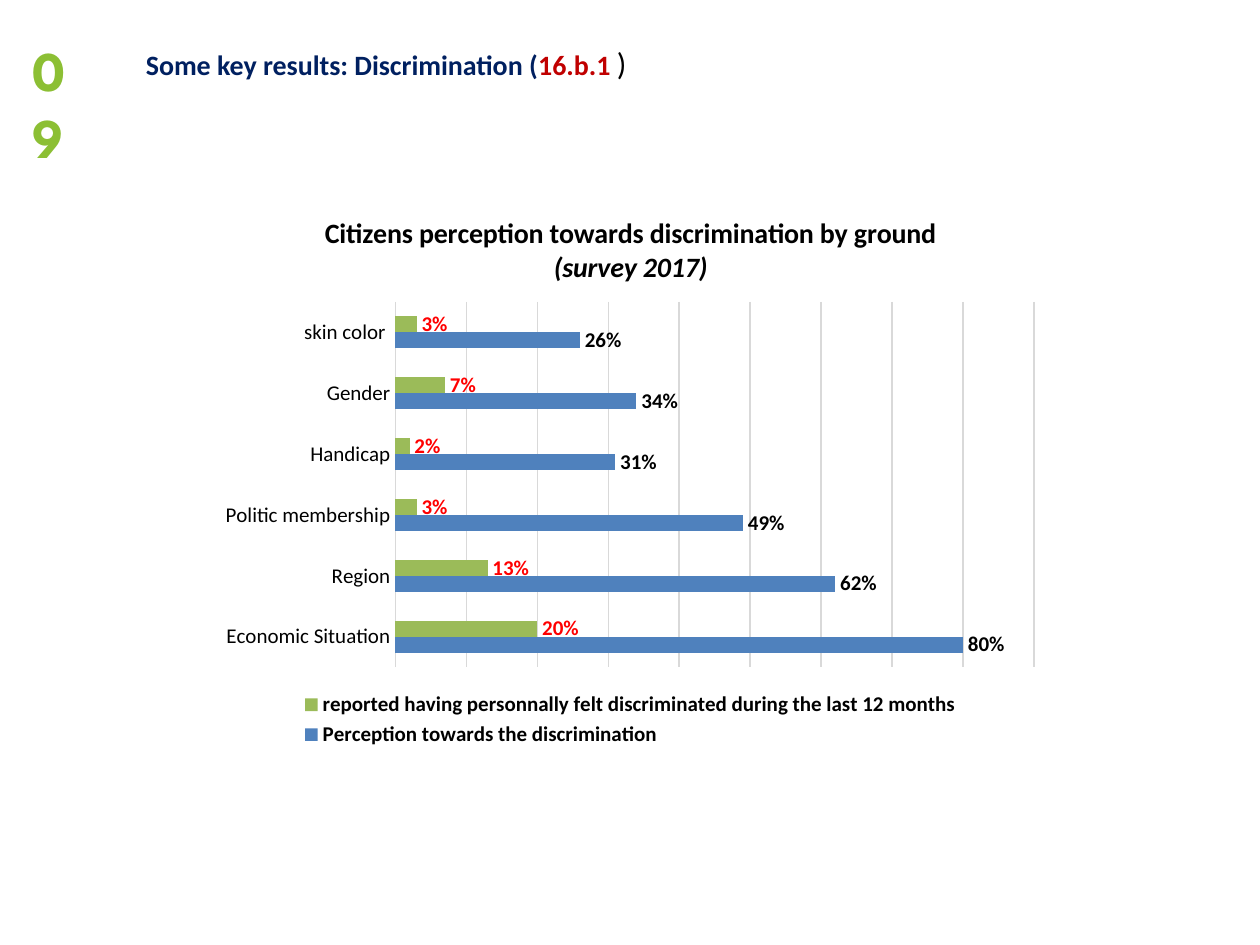
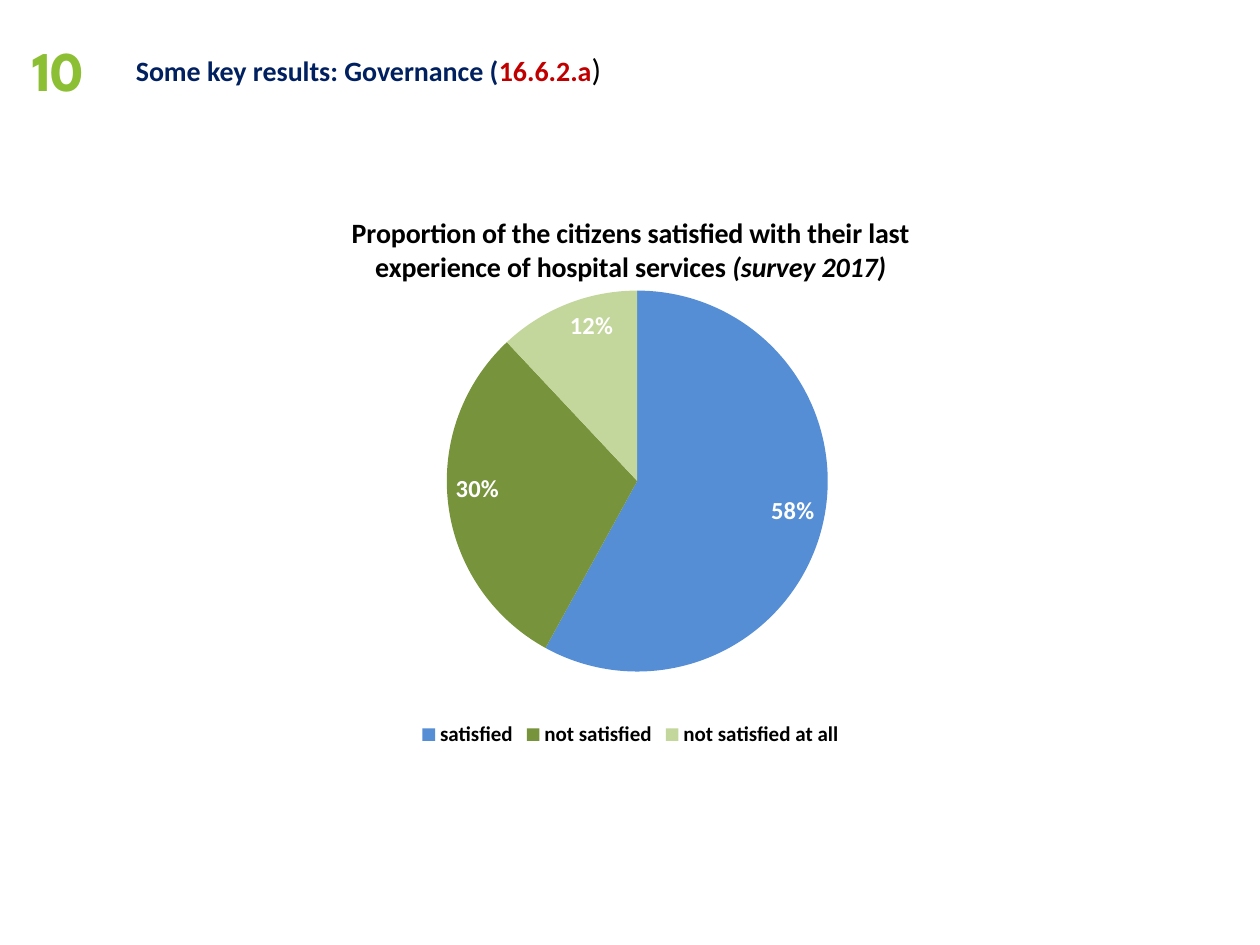
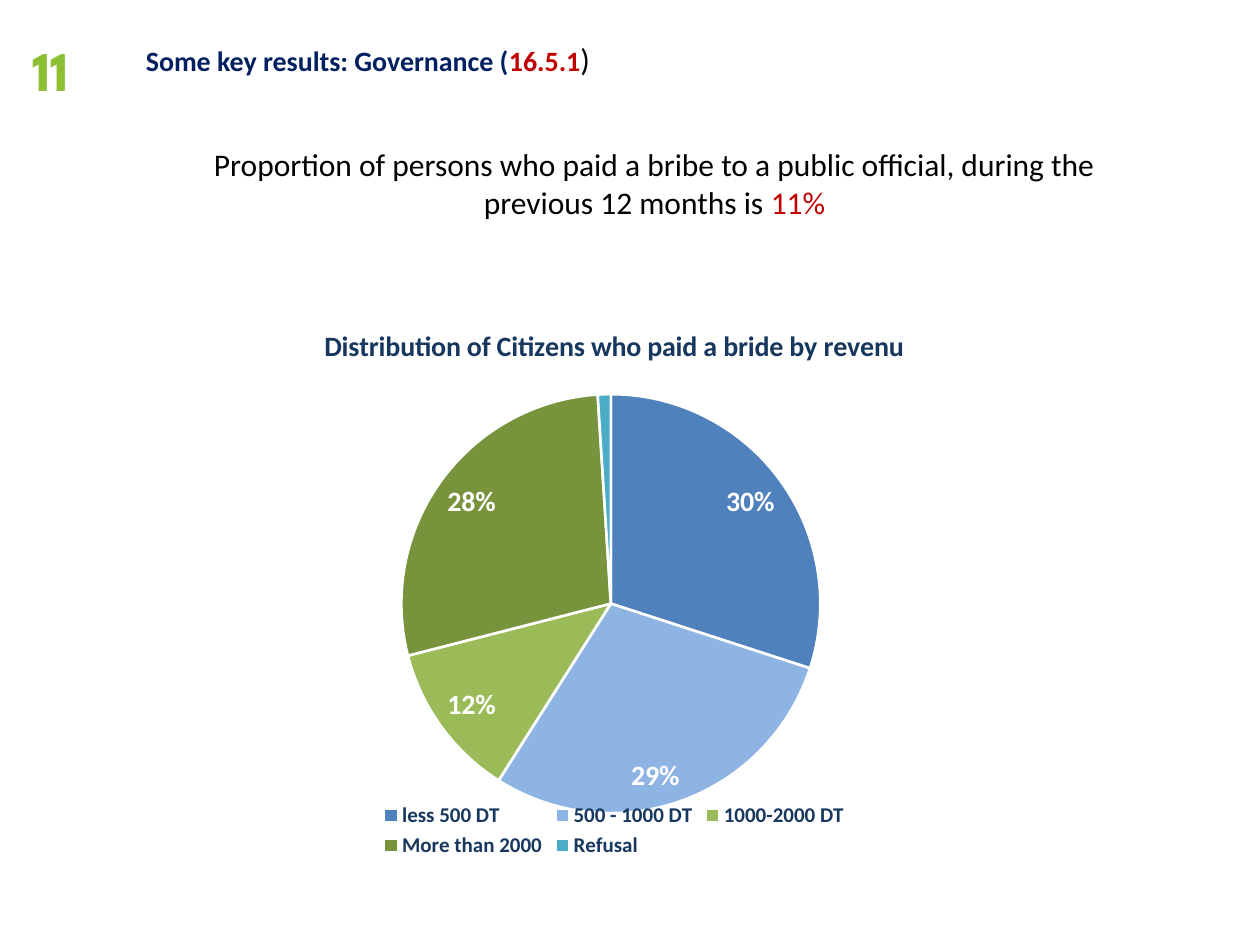
from lxml import etree
from pptx import Presentation
from pptx.chart.data import CategoryChartData
from pptx.dml.color import RGBColor
from pptx.enum.chart import XL_CHART_TYPE, XL_LABEL_POSITION, XL_LEGEND_POSITION, XL_TICK_MARK
from pptx.enum.text import MSO_AUTO_SIZE, PP_ALIGN
from pptx.oxml import parse_xml
from pptx.oxml.ns import nsdecls, qn
from pptx.util import Inches, Pt

BAR, PIE = XL_CHART_TYPE.BAR_CLUSTERED, XL_CHART_TYPE.PIE
INSIDE_END, OUTSIDE_END = XL_LABEL_POSITION.INSIDE_END, XL_LABEL_POSITION.OUTSIDE_END
LEGEND_BOTTOM = XL_LEGEND_POSITION.BOTTOM
NO_TICK = XL_TICK_MARK.NONE
CENTER, LEFT = PP_ALIGN.CENTER, PP_ALIGN.LEFT
GROW = MSO_AUTO_SIZE.SHAPE_TO_FIT_TEXT

COLORS = {
    "black": "000000", "white": "FFFFFF", "navy": "002060", "slate": "17375E",
    "crimson": "C00000", "red": "FF0000", "lime": "8CBF34", "grid": "D9D9D9",
    "blue": "4F81BD", "mid_blue": "558ED5", "pale_blue": "8EB4E3", "teal": "4BACC6",
    "green": "9BBB59", "dark_green": "77933C", "pale_green": "C3D69B",
}
FONT, NUMBER_FONT = "Calibri", "League Spartan"

# Grid of 100 columns by 100 rows
WIDTH, HEIGHT = Inches(10), Inches(7.5)
NUMBER_BOX = (1.6, 3.07, 7, 8.53)
HEADING_SIZE = (56.3, 5.33)
CHART_SIZE = (66.7, 59.2)


def place(x, y, w, h):
    return int(x * WIDTH / 100), int(y * HEIGHT / 100), int(w * WIDTH / 100), int(h * HEIGHT / 100)


def rgb(name):
    return RGBColor.from_string(COLORS[name])


def style(font, size, color="black", bold=False, name=FONT):
    font.name, font.size, font.bold = name, Pt(size), bold
    font.color.rgb = rgb(color)


def add_text(slide, box, runs, align=LEFT):
    """Each run is its text followed by the arguments of style()."""
    tf = slide.shapes.add_textbox(*place(*box)).text_frame
    tf.word_wrap = True
    tf.auto_size = GROW
    p = tf.paragraphs[0]
    p.alignment = align
    for text, *look in runs:
        r = p.add_run()
        r.text = text
        style(r.font, *look)


def add_header(slide, number, topic, code, corner):
    add_text(slide, (*corner, *HEADING_SIZE), [
        (f"Some key results: {topic} (", 16, "navy", True),
        (code, 16, "crimson", True),
        (")", 18),
    ])
    add_text(slide, NUMBER_BOX, [(number, 32, "lime", True, NUMBER_FONT)])


def set_plot_area(chart, x, y, w, h):
    """Fix the inner plot area, in shares of the chart."""
    plot_area = chart._chartSpace.chart.plotArea
    for old in plot_area.findall(qn("c:layout")):
        plot_area.remove(old)
    layout = parse_xml(f"<c:layout {nsdecls('c')}><c:manualLayout/></c:layout>")
    settings = {"layoutTarget": "inner", "xMode": "edge", "yMode": "edge",
                "x": x, "y": y, "w": w, "h": h}
    for tag, val in settings.items():
        etree.SubElement(layout[0], qn(f"c:{tag}")).set("val", str(val))
    plot_area.insert(0, layout)


def add_chart(slide, kind, corner, title, note, cats, series, plot, color="black"):
    """Add a chart with its title, bottom legend and fixed plot area."""
    data = CategoryChartData(number_format="0%")
    data.categories = cats
    for name, vals in series:
        data.add_series(name, vals)
    chart = slide.shapes.add_chart(kind, *place(*corner, *CHART_SIZE), data).chart
    style(chart.font, 10)

    chart.has_title = True
    p = chart.chart_title.text_frame.paragraphs[0]
    for text, italic in ((title, False), (note, True)):
        if text:
            r = p.add_run()
            r.text = text
            style(r.font, 16, color, True)
            r.font.italic = italic
    chart.chart_title.include_in_layout = False

    chart.has_legend = True
    chart.legend.position = LEGEND_BOTTOM
    chart.legend.include_in_layout = False
    style(chart.legend.font, 12, color, True)
    set_plot_area(chart, *plot)
    return chart


def add_labels(series, size, color, position):
    labels = series.data_labels
    labels.show_value = True
    labels.number_format, labels.number_format_is_linked = "0%", False
    labels.position = position
    style(labels.font, size, color, True)
    return labels


def add_bars(slide, corner, title, note, cats, series, plot):
    """Each series is its name, values, fill colour and label colour."""
    chart = add_chart(slide, BAR, corner, title, note, cats, [s[:2] for s in series], plot)
    bars = chart.plots[0]
    bars.gap_width, bars.overlap, bars.vary_by_categories = 182, 0, False
    for ser, (_, _, fill, label) in zip(bars.series, series):
        ser.format.fill.solid()
        ser.format.fill.fore_color.rgb = rgb(fill)
        add_labels(ser, 12, label, OUTSIDE_END)

    # Axes
    cat_axis, val_axis = chart.category_axis, chart.value_axis
    cat_axis.major_tick_mark = cat_axis.minor_tick_mark = NO_TICK
    style(cat_axis.tick_labels.font, 12)
    val_axis.visible = False
    val_axis.minimum_scale, val_axis.maximum_scale, val_axis.major_unit = 0, 0.9, 0.1
    val_axis.has_major_gridlines = True
    for line in (cat_axis.format.line, val_axis.major_gridlines.format.line):
        line.color.rgb = rgb("grid")
        line.width = Pt(0.75)


def add_pie(slide, corner, title, note, slices, plot, label_size,
            color="black", outlined=False, unlabelled=()):
    """Each slice is its category, value and fill colour."""
    cats, vals, fills = zip(*slices)
    chart = add_chart(slide, PIE, corner, title, note, cats, [("Series 1", vals)], plot, color)
    chart.plots[0].vary_by_categories = True
    ser = chart.plots[0].series[0]
    for i, fill in enumerate(fills):
        fmt = ser.points[i].format
        fmt.fill.solid()
        fmt.fill.fore_color.rgb = rgb(fill)
        if outlined:
            fmt.line.color.rgb = rgb("white")
            fmt.line.width = Pt(1.5)
    labels = add_labels(ser, label_size, "white", INSIDE_END)
    for n, i in enumerate(unlabelled):
        labels._element.insert(n, parse_xml(
            f'<c:dLbl {nsdecls("c")}><c:idx val="{i}"/><c:delete val="1"/></c:dLbl>'))


def discrimination_slide(slide):
    add_header(slide, "09", "Discrimination", "16.b.1 ", (10.6, 4))
    add_bars(
        slide, (16.7, 20.4),
        "Citizens perception towards discrimination by ground ", "(survey 2017)",
        ["Economic Situation", "Region", "Politic membership", "Handicap", "Gender", "skin color "],
        [("Perception towards the discrimination",
          (0.8, 0.62, 0.49, 0.31, 0.34, 0.26), "blue", "black"),
         ("reported having personnally felt discriminated during the last 12 months",
          (0.2, 0.13, 0.03, 0.02, 0.07, 0.03), "green", "red")],
        plot=(0.22, 0.195, 0.76, 0.653))


def hospital_slide(slide):
    add_header(slide, "10", "Governance", "16.6.2.a", (9.8, 4.67))
    add_pie(
        slide, (16.7, 20.4),
        "Proportion of the citizens satisfied with their last experience of hospital services ",
        "(survey 2017)",
        [("satisfied", 0.58, "mid_blue"),
         ("not satisfied", 0.3, "dark_green"),
         ("not satisfied at all", 0.12, "pale_green")],
        plot=(0.281, 0.175, 0.454, 0.681), label_size=14)


def bribery_slide(slide):
    add_header(slide, "11", "Governance", "16.5.1", (10.6, 3.6))
    add_text(slide, (12.6, 14.67, 78.7, 9.47), [
        ("Proportion of persons who paid a bribe to a public official, "
         "during the previous 12 months is ", 18),
        ("11%", 18, "crimson"),
    ], CENTER)
    add_pie(
        slide, (15.4, 32.13), "Distribution of Citizens who paid a bride by revenu", "",
        [("less 500 DT", 0.3, "blue"),
         ("500 - 1000 DT", 0.29, "pale_blue"),
         ("1000-2000 DT", 0.12, "green"),
         ("More than 2000", 0.28, "dark_green"),
         ("Refusal", 0.01, "teal")],
        plot=(0.246, 0.162, 0.5, 0.749), label_size=16,
        color="slate", outlined=True, unlabelled=[4])


def main():
    prs = Presentation()
    prs.slide_width, prs.slide_height = WIDTH, HEIGHT
    blank = prs.slide_layouts[6]
    for build in (discrimination_slide, hospital_slide, bribery_slide):
        build(prs.slides.add_slide(blank))
    prs.save("out.pptx")


if __name__ == "__main__":
    main()
